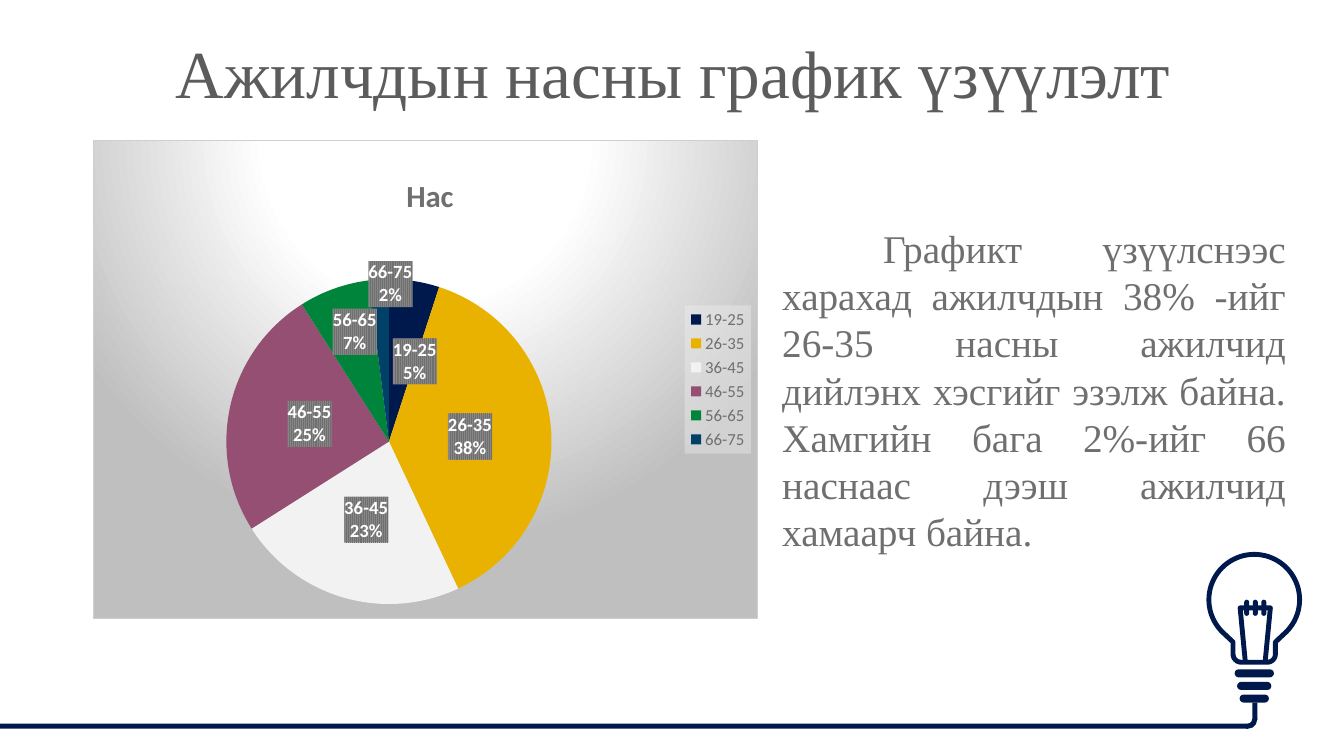
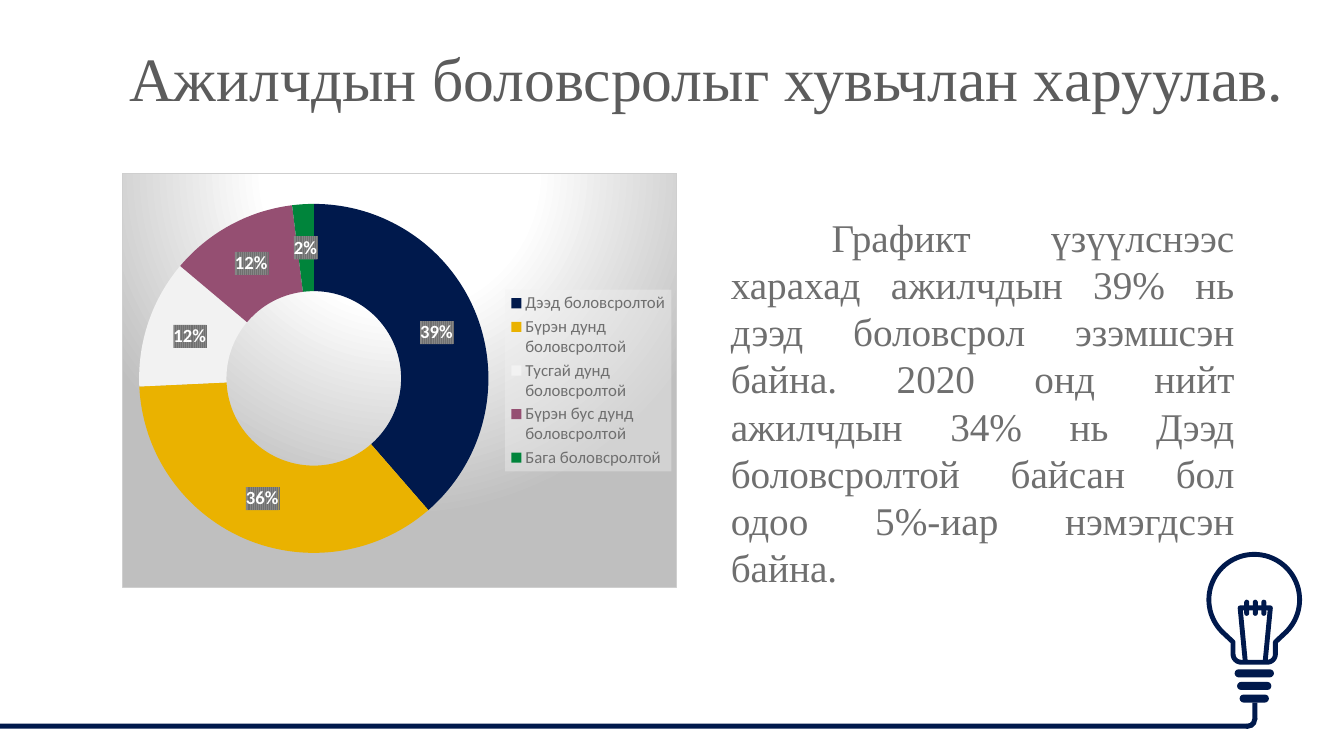
from copy import deepcopy
from math import cos, radians, sin

from pptx import Presentation
from pptx.chart.data import CategoryChartData
from pptx.dml.color import RGBColor
from pptx.enum.chart import XL_CHART_TYPE, XL_LABEL_POSITION, XL_LEGEND_POSITION
from pptx.enum.shapes import MSO_SHAPE
from pptx.enum.text import MSO_ANCHOR, PP_ALIGN
from pptx.oxml import parse_xml
from pptx.oxml.ns import nsdecls, qn
from pptx.util import Inches, Pt

PIE, RING = XL_CHART_TYPE.PIE, XL_CHART_TYPE.DOUGHNUT
MIDDLE, TOP = MSO_ANCHOR.MIDDLE, MSO_ANCHOR.TOP
CENTER, JUSTIFY = PP_ALIGN.CENTER, PP_ALIGN.JUSTIFY
RECT, ROUND, ARC = MSO_SHAPE.RECTANGLE, MSO_SHAPE.ROUNDED_RECTANGLE, MSO_SHAPE.BLOCK_ARC
LABEL_MID, RIGHT = XL_LABEL_POSITION.CENTER, XL_LEGEND_POSITION.RIGHT

NAVY = RGBColor(0x00, 0x19, 0x4C)
GOLD = RGBColor(0xEA, 0xB2, 0x00)
PALE = RGBColor(0xF2, 0xF2, 0xF2)
PLUM = RGBColor(0x95, 0x4F, 0x72)
GREEN = RGBColor(0x00, 0x84, 0x3B)
TEAL = RGBColor(0x01, 0x40, 0x67)
WHITE = RGBColor(0xFF, 0xFF, 0xFF)
DARK = RGBColor(0x5C, 0x5C, 0x5C)
GREY = RGBColor(0x6F, 0x6F, 0x6F)
INK = RGBColor(0x3F, 0x3F, 0x3F)
SLICES = [NAVY, GOLD, PALE, PLUM, GREEN, TEAL]

SERIF, SANS = "Times New Roman", "Calibri"
STROKE = Pt(3.5)
AXIS = 12.44

PANEL = """<a:gradFill><a:gsLst>
<a:gs pos="0"><a:srgbClr val="FFFFFF"/></a:gs>
<a:gs pos="39000"><a:srgbClr val="FFFFFF"/></a:gs>
<a:gs pos="100000"><a:srgbClr val="BFBFBF"/></a:gs></a:gsLst>
<a:path path="circle"><a:fillToRect l="50000" t="-80000" r="50000" b="180000"/></a:path>
</a:gradFill><a:ln w="9525"><a:solidFill><a:srgbClr val="CFCFCF"/></a:solidFill></a:ln>"""
STRIPE = """<a:pattFill prst="narVert"><a:fgClr><a:srgbClr val="6F6F6F"/></a:fgClr>
<a:bgClr><a:srgbClr val="868686"/></a:bgClr></a:pattFill>"""
VEIL = """<a:solidFill><a:srgbClr val="F2F2F2"><a:alpha val="39000"/></a:srgbClr></a:solidFill>"""


def put(item, **fmt):
    for key, val in fmt.items():
        setattr(item, key, val)


def style(font, color, **fmt):
    put(font, **fmt)
    font.color.rgb = color


def node(tag, body=""):
    return parse_xml(f"<c:{tag} {nsdecls('c', 'a')}>{body}</c:{tag}>")


def place(item, index, spots, edge=True):
    for old in item.findall(qn("c:layout")):
        item.remove(old)
    modes = ['<c:xMode val="edge"/>', '<c:yMode val="edge"/>'] if edge else []
    sizes = [f'<c:{k} val="{v}"/>' for k, v in zip("xywh", spots)]
    body = "".join(modes + sizes)
    item.insert(index, node("layout", f"<c:manualLayout>{body}</c:manualLayout>"))


def bend(x, y, radius, start, end, steps):
    turns = [radians(start + (end - start) * i / steps) for i in range(steps + 1)]
    return [(x + radius * cos(t), y + radius * sin(t)) for t in turns]


class Deck:
    """Slides with a shared title, chart, text and bulb style."""

    def __init__(self):
        self.file = Presentation()
        put(self.file, slide_width=Inches(13.33), slide_height=Inches(7.5))
        self.slide = None

    def start(self):
        self.slide = self.file.slides.add_slide(self.file.slide_layouts[6])
        self.bulb()

    def shape(self, kind, box, adjust=()):
        form = self.slide.shapes.add_shape(kind, *map(Inches, box))
        form.shadow.inherit = False
        form.fill.solid()
        form.fill.fore_color.rgb = NAVY
        form.line.fill.background()
        for i, val in enumerate(adjust):
            form.adjustments[i] = val

    def outline(self, points, closed):
        dots = [(Inches(x), Inches(y)) for x, y in points]
        pen = self.slide.shapes.build_freeform(*dots[0])
        pen.add_line_segments(dots[1:], close=closed)
        form = pen.convert_to_shape()
        form.shadow.inherit = False
        if closed:
            form.fill.solid()
            form.fill.fore_color.rgb = WHITE
        else:
            form.fill.background()
        form.line.color.rgb = NAVY
        form.line.width = STROKE

    def bulb(self):
        glass = bend(AXIS, 5.95, 0.45, 135, 405, 60)
        glass += bend(AXIS + 0.13, 6.49, 0.08, 0, 90, 8)
        glass += bend(AXIS - 0.13, 6.49, 0.08, 90, 180, 8)
        neck = [(AXIS + 0.21, 6.37)]
        glass = glass[:61] + neck + glass[61:] + [(AXIS - 0.21, 6.37)]
        self.outline(glass, True)
        wire = [(-0.1, 6.55), (-0.15, 6.03), (0.15, 6.03), (0.1, 6.55)]
        self.outline([(AXIS + 0.01 + x, y) for x, y in wire], False)
        for i in range(3):
            self.shape(ROUND, (12.34 + 0.085 * i, 5.95, 0.05, 0.16), [0.5])
            wide = 0.39 - 0.05 * i
            self.shape(ROUND, (AXIS - wide / 2, 6.64 + 0.125 * i, wide, 0.08), [0.5])
        self.shape(RECT, (0, 7.18, 12.37, 0.05))
        self.shape(RECT, (12.42, 6.97, 0.05, 0.17))
        self.shape(ARC, (12.28, 7.04, 0.19, 0.19), [213.394, 60.915, 0.271])

    def text(self, box, words, size, color, align, anchor=TOP):
        frame = self.slide.shapes.add_textbox(*map(Inches, box)).text_frame
        put(frame, word_wrap=True, vertical_anchor=anchor)
        para = frame.paragraphs[0]
        para.text = words
        para.alignment = align
        style(para.font, color, size=Pt(size), name=SERIF)
        return para

    def title(self, box, words, size):
        self.text(box, words, size, DARK, CENTER, MIDDLE).line_spacing = 0.9

    def body(self, box, words):
        para = self.text(box, words, 28, GREY, JUSTIFY)
        para._p.get_or_add_pPr().set("indent", str(Inches(1)))

    def chart(self, kind, box, name, rows, plot_box, key_box, head=None, shifts=None):
        data = CategoryChartData()
        data.categories = list(rows)
        data.add_series(name, list(rows.values()))
        chart = self.slide.shapes.add_chart(kind, *map(Inches, box), data).chart
        style(chart.font, INK, size=Pt(10), name=SANS)
        root = chart.element.find(qn("c:chart"))
        root.addnext(node("spPr", PANEL))
        chart.has_title = bool(head)
        if head:
            frame = chart.chart_title.text_frame
            frame.text = head
            style(frame.paragraphs[0].runs[0].font, GREY, size=Pt(22), bold=True, name=SANS)
            place(root.find(qn("c:title")), 1, (0.463, 0.06))
        place(root.find(qn("c:plotArea")), 0, plot_box)
        self.key(chart, root, key_box)
        plot = chart.plots[0]
        plot.vary_by_categories = True
        series = plot.series[0]
        for i, color in enumerate(SLICES[:len(rows)]):
            fill = series.points[i].format.fill
            fill.solid()
            fill.fore_color.rgb = color
        self.labels(series, kind == PIE, shifts or {})

    def key(self, chart, root, box):
        chart.has_legend = True
        put(chart.legend, position=RIGHT, include_in_layout=False)
        style(chart.legend.font, GREY, size=Pt(12), name=SANS)
        item = root.find(qn("c:legend"))
        place(item, 1, box)
        item.find(qn("c:txPr")).addprevious(node("spPr", VEIL))

    def labels(self, series, named, shifts):
        tags = series.data_labels
        put(tags, show_value=False, show_percentage=True, show_category_name=named,
            number_format="0%", number_format_is_linked=False)
        style(tags.font, WHITE, size=Pt(13.3), bold=True, name=SANS)
        if named:
            tags.position = LABEL_MID
        root = series._element.find(qn("c:dLbls"))
        root.find(qn("c:txPr")).addprevious(node("spPr", STRIPE))
        root.find(qn("c:showBubbleSize")).addnext(node("separator", "\n"))
        lead = root.find(qn("c:showLeaderLines"))
        if lead is not None:
            lead.set("val", "0")
        parts = [part for part in root if part is not lead]
        for spot, (i, shift) in enumerate(shifts.items()):
            label = node("dLbl", f'<c:idx val="{i}"/>')
            place(label, 1, shift, edge=False)
            label.extend([deepcopy(part) for part in parts])
            root.insert(spot, label)


def main():
    deck = Deck()

    deck.start()
    deck.title((0.35, 0.37, 12.66, 0.79), "Ажилчдын насны график үзүүлэлт", 48)
    ages = {"19-25": 5, "26-35": 38, "36-45": 23, "46-55": 25, "56-65": 7, "66-75": 2}
    deck.chart(PIE, (0.92, 1.39, 6.6, 4.75), "Нас", ages,
               (0.2, 0.29, 0.49, 0.68), (0.89, 0.345, 0.1, 0.31), "Нас",
               {0: (0.02, 0), 4: (-0.01, -0.07), 5: (0.01, -0.16)})
    deck.body((7.66, 2.18, 5.19, 3.4),
              "Графикт үзүүлснээс харахад ажилчдын 38% -ийг 26-35 насны ажилчид "
              "дийлэнх хэсгийг эзэлж байна. Хамгийн бага 2%-ийг 66 наснаас дээш "
              "ажилчид хамаарч байна.")

    deck.start()
    deck.title((0.68, 0.11, 12.66, 1.4), "Ажилчдын боловсролыг хувьчлан харуулав.", 44)
    levels = {"Дээд боловсролтой": 39, "Бүрэн дунд боловсролтой": 36,
              "Тусгай дунд боловсролтой": 12, "Бүрэн бус дунд боловсролтой": 12,
              "Бага боловсролтой": 2}
    deck.chart(RING, (1.21, 1.72, 5.51, 4.11), "Series 1", levels,
               (0.03, 0.07, 0.63, 0.85), (0.69, 0.28, 0.3, 0.44))
    deck.body((7.15, 2.07, 5.19, 3.4),
              "Графикт үзүүлснээс харахад ажилчдын 39% нь дээд боловсрол эзэмшсэн "
              "байна. 2020 онд нийт ажилчдын 34% нь Дээд боловсролтой байсан бол "
              "одоо 5%-иар нэмэгдсэн байна.")

    deck.file.save("out.pptx")


if __name__ == "__main__":
    main()
